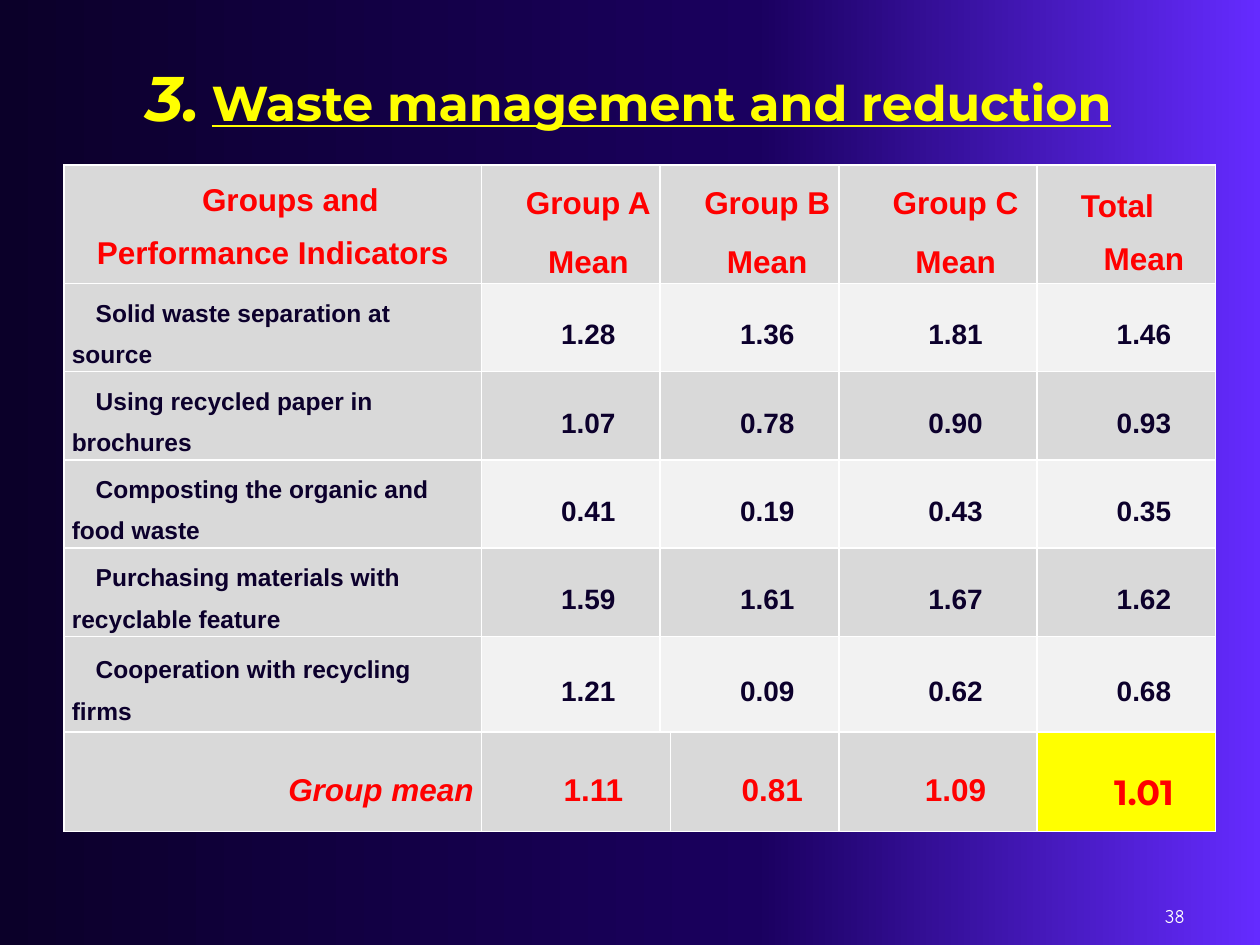
from dataclasses import dataclass
from itertools import zip_longest

from lxml import etree
from pptx import Presentation
from pptx.dml.color import RGBColor
from pptx.enum.text import MSO_ANCHOR, PP_ALIGN
from pptx.oxml.ns import qn
from pptx.util import Inches, Pt

LEFT, CENTER, RIGHT = PP_ALIGN.LEFT, PP_ALIGN.CENTER, PP_ALIGN.RIGHT
TOP, MIDDLE, BOTTOM = MSO_ANCHOR.TOP, MSO_ANCHOR.MIDDLE, MSO_ANCHOR.BOTTOM

COLORS = {
    "night": "0B0029", "indigo": "1A005F", "violet": "652BFF",
    "ink": "0C002C", "red": "FF0000", "yellow": "FFFF00", "white": "FFFFFF",
    "gray": "D9D9D9", "pale": "F2F2F2",
}
BACKGROUND_STOPS = [(0, "night"), (60, "indigo"), (100, "violet")]
TABLE_LEFT, TABLE_TOP = 0.51, 1.31
ROW_HEIGHTS = [0.94, 0.7, 0.7, 0.7, 0.7, 0.76]
MEAN_HEIGHT = 0.79
INDICATORS = [
    ("Solid waste separation at source", "1.28", "1.36", "1.81", "1.46"),
    ("Using recycled paper in brochures", "1.07", "0.78", "0.90", "0.93"),
    ("Composting the organic and food waste", "0.41", "0.19", "0.43", "0.35"),
    ("Purchasing materials with recyclable feature", "1.59", "1.61", "1.67", "1.62"),
    ("Cooperation with recycling firms", "1.21", "0.09", "0.62", "0.68"),
]
GROUP_MEANS = ["1.11", "0.81", "1.09"]


@dataclass
class Style:
    size: float
    color: str
    font: str = "Arial"
    bold: bool = True
    italic: bool = False
    underline: bool = False


@dataclass
class Line:
    text: str
    indent: float = 0.28
    right_margin: float = 0
    space_before: float = 3


@dataclass
class CellSpec:
    lines: list[Line]
    style: Style
    fill: str = "gray"
    align: PP_ALIGN = CENTER
    anchor: MSO_ANCHOR = MIDDLE


HEADING = Style(18, "red")
LABEL = Style(14, "ink")
VALUE = Style(16, "ink")


def add_span(para, text: str, style: Style) -> None:
    span = para.add_run()
    span.text = text
    formats = {"size": Pt(style.size), "name": style.font, "bold": style.bold,
               "italic": style.italic, "underline": style.underline}
    for name, value in formats.items():
        setattr(span.font, name, value)
    span.font.color.rgb = RGBColor.from_string(COLORS[style.color])


def set_indent(para, first: float, right: float = 0) -> None:
    properties = para._p.get_or_add_pPr()
    for name, value in {"marL": 0, "marR": right, "indent": first}.items():
        properties.set(name, str(Inches(value)))


def add_color_fill(parent, color: str) -> None:
    etree.SubElement(parent, qn("a:srgbClr"), val=COLORS[color])


def set_borders(cell) -> None:
    properties = cell._tc.get_or_add_tcPr()
    for position, side in enumerate(("lnL", "lnR", "lnT", "lnB")):
        border = etree.Element(qn(f"a:{side}"), w=str(Pt(1)))
        add_color_fill(etree.SubElement(border, qn("a:solidFill")), "white")
        properties.insert(position, border)


def fill_cell(cell, spec: CellSpec) -> None:
    formats = {"margin_left": Inches(0.06), "margin_right": Inches(0.06),
               "margin_top": 0, "margin_bottom": 0, "vertical_anchor": spec.anchor}
    for name, value in formats.items():
        setattr(cell, name, value)
    cell.fill.solid()
    cell.fill.fore_color.rgb = RGBColor.from_string(COLORS[spec.fill])
    set_borders(cell)
    paras = list(cell.text_frame.paragraphs)
    for para, line in zip_longest(paras, spec.lines):
        para = para or cell.text_frame.add_paragraph()
        para.alignment = spec.align
        para.line_spacing = 1.5
        para.space_before = Pt(line.space_before)
        set_indent(para, line.indent, line.right_margin)
        add_span(para, line.text, spec.style)


def add_grid(page, top: float, widths: list[float], heights: list[float],
             rows: list[list[CellSpec]]) -> None:
    frame = page.shapes.add_table(len(rows), len(widths), Inches(TABLE_LEFT), Inches(top),
                                  Inches(sum(widths)), Inches(sum(heights)))
    table = frame.table
    table.first_row = table.horz_banding = False
    for column, width in zip(table.columns, widths):
        column.width = Inches(width)
    for row, height, specs in zip(table.rows, heights, rows):
        row.height = Inches(height)
        for cell, spec in zip(row.cells, specs):
            fill_cell(cell, spec)


def add_text(page, box: tuple, anchor: MSO_ANCHOR, align: PP_ALIGN,
             spans: list[tuple[str, Style]], indent: float = 0) -> None:
    frame = page.shapes.add_textbox(*map(Inches, box)).text_frame
    frame.word_wrap = True
    frame.vertical_anchor = anchor
    para = frame.paragraphs[0]
    para.alignment = align
    set_indent(para, indent)
    for text, style in spans:
        add_span(para, text, style)


def set_background(page) -> None:
    fill = page.background.fill
    fill.gradient()
    fill.gradient_angle = 0
    stops = next(page._element.iter(qn("a:gsLst")))
    for stop in list(stops):
        stops.remove(stop)
    for percent, color in BACKGROUND_STOPS:
        add_color_fill(etree.SubElement(stops, qn("a:gs"), pos=str(percent * 1000)), color)


def indicator_rows() -> list[list[CellSpec]]:
    header = [CellSpec([Line("Groups and Performance Indicators")], HEADING, anchor=TOP)]
    header += [CellSpec([Line(f"Group {letter}"), Line("Mean")], HEADING) for letter in "ABC"]
    header.append(CellSpec([Line("Total", 0, 0.14), Line("Mean", space_before=0)], HEADING))
    rows = [header]
    for number, (label, *values) in enumerate(INDICATORS):
        fill = "gray" if number % 2 else "pale"
        rows.append([CellSpec([Line(label, 0.19)], LABEL, align=LEFT)]
                    + [CellSpec([Line(value)], VALUE, fill) for value in values])
    return rows


def mean_row() -> list[CellSpec]:
    label = CellSpec([Line("Group mean")], Style(18, "red", italic=True), align=RIGHT)
    total = CellSpec([Line("1.01")], Style(20, "red", "Montserrat"), "yellow")
    return [label, *(CellSpec([Line(mean)], HEADING) for mean in GROUP_MEANS), total]


def main() -> None:
    deck = Presentation()
    deck.slide_width, deck.slide_height = Inches(10), Inches(7.5)
    page = deck.slides.add_slide(deck.slide_layouts[6])
    set_background(page)
    add_grid(page, TABLE_TOP, [3.31, 1.42, 1.42, 1.57, 1.42], ROW_HEIGHTS, indicator_rows())
    add_text(page, (0.98, 0, 8.66, 1.11), BOTTOM, LEFT, [
        ("3.", Style(36, "yellow", "Montserrat", italic=True)),
        (" ", Style(24, "white", "Montserrat", italic=True)),
        ("Waste management and reduction", Style(28, "yellow", "Montserrat", underline=True)),
    ], indent=0.08)
    add_grid(page, TABLE_TOP + sum(ROW_HEIGHTS), [3.31, 1.5, 1.34, 1.57, 1.42],
             [MEAN_HEIGHT], [mean_row()])
    add_text(page, (7.17, 7.13, 2.33, 0.28), MIDDLE, RIGHT,
             [("38", Style(11, "white", "Comic Neue", bold=False))])
    deck.save("out.pptx")


if __name__ == "__main__":
    main()
